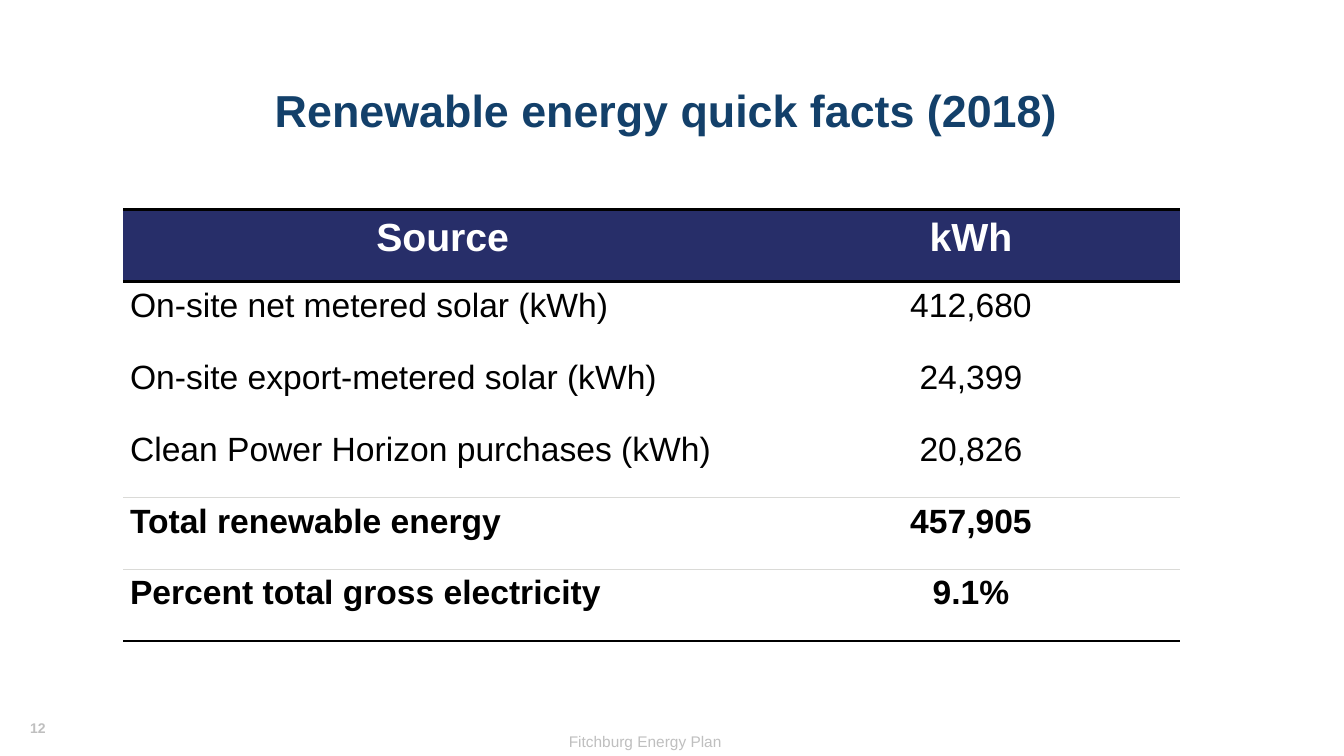
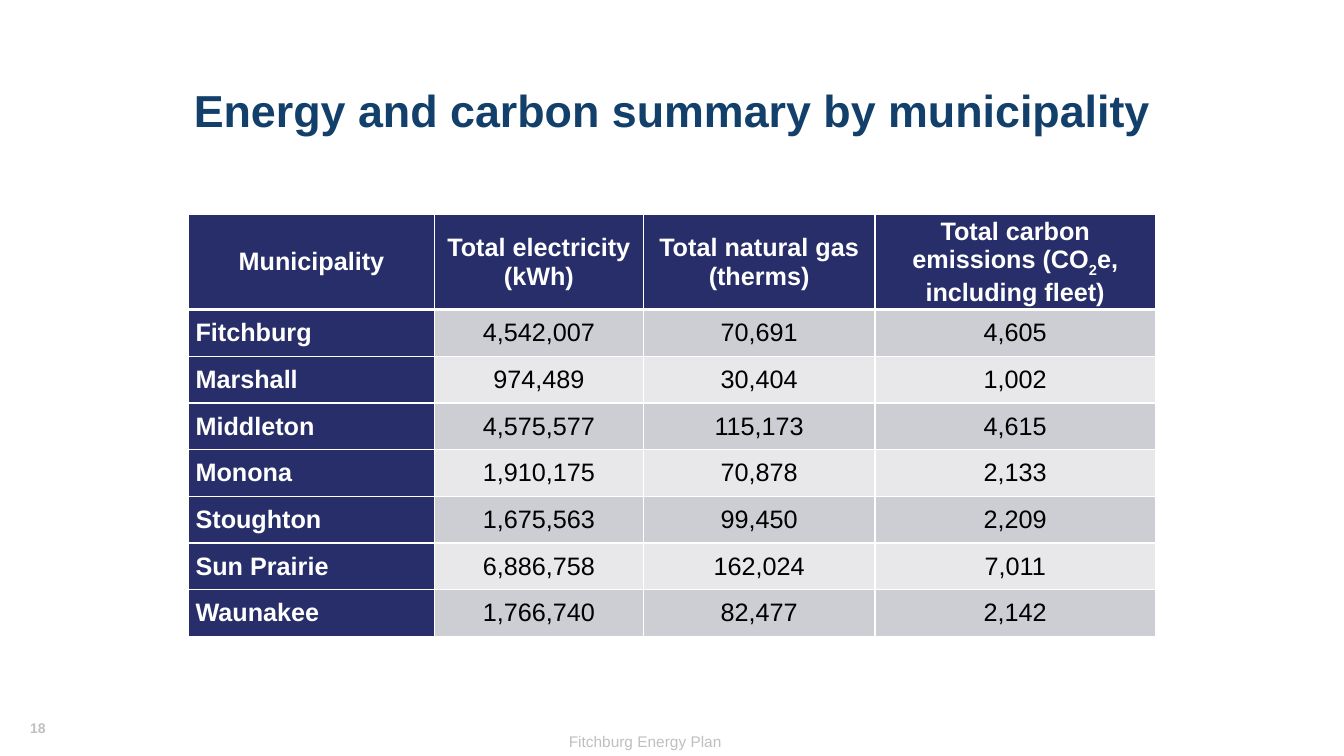
from lxml import etree
from pptx import Presentation
from pptx.dml.color import RGBColor
from pptx.enum.text import MSO_ANCHOR, PP_ALIGN
from pptx.oxml.ns import qn
from pptx.util import Inches, Pt

LEFT, CENTER = PP_ALIGN.LEFT, PP_ALIGN.CENTER
TOP, MIDDLE = MSO_ANCHOR.TOP, MSO_ANCHOR.MIDDLE

NAVY = RGBColor(0x27, 0x2E, 0x69)
TITLE_BLUE = RGBColor(0x13, 0x40, 0x6A)
WHITE = RGBColor(0xFF, 0xFF, 0xFF)
BLACK = RGBColor(0, 0, 0)
FOOTER_GREY = RGBColor(0xBF, 0xBF, 0xBF)
RULE_GREY = RGBColor(0xDA, 0xDA, 0xD7)
BAND_DARK = RGBColor(0xCD, 0xCD, 0xD4)
BAND_LIGHT = RGBColor(0xE8, 0xE8, 0xEB)

FONT = "Arial"
SIDES = ("L", "R", "T", "B")

TITLE_BOX = (0.92, 0.4, 11.5, 1.45)
FOOTER_BOX = (4.35, 7.21, 4.1, 0.29)
NUMBER_BOX = (0.2, 7.09, 0.37, 0.27)

SOURCES = [
    ("Source", "kWh"),
    ("On-site net metered solar (kWh)", "412,680"),
    ("On-site export-metered solar (kWh)", "24,399"),
    ("Clean Power Horizon purchases (kWh)", "20,826"),
    ("Total renewable energy", "457,905"),
    ("Percent total gross electricity", "9.1%"),
]
MUNICIPALITIES = [
    ("Municipality", "Total electricity (kWh)", "Total natural gas (therms)",
     ("Total carbon emissions (CO", "2", "e, including fleet)")),
    ("Fitchburg", "4,542,007", "70,691", "4,605"),
    ("Marshall", "974,489", "30,404", "1,002"),
    ("Middleton", "4,575,577", "115,173", "4,615"),
    ("Monona", "1,910,175", "70,878", "2,133"),
    ("Stoughton", "1,675,563", "99,450", "2,209"),
    ("Sun Prairie", "6,886,758", "162,024", "7,011"),
    ("Waunakee", "1,766,740", "82,477", "2,142"),
]


def write(tf, text, size, color, bold=False, align=LEFT, spacing=None):
    p = tf.paragraphs[0]
    p.alignment = align
    p.line_spacing = spacing
    parts = (text,) if isinstance(text, str) else text
    for i, part in enumerate(parts):
        r = p.add_run()
        r.text = part
        r.font.name, r.font.size, r.font.bold = FONT, Pt(size), bold
        r.font.color.rgb = color
        if i % 2:
            r._r.get_or_add_rPr().set("baseline", "-25000")


def add_text(s, box, text, size, color, anchor=TOP, **style):
    tf = s.shapes.add_textbox(*map(Inches, box)).text_frame
    tf.word_wrap = True
    tf.vertical_anchor = anchor
    write(tf, text, size, color, **style)


def add_slide(prs, title, number):
    s = prs.slides.add_slide(prs.slide_layouts[6])
    add_text(s, FOOTER_BOX, "Fitchburg Energy Plan", 11, FOOTER_GREY, align=CENTER)
    add_text(s, NUMBER_BOX, number, 10, FOOTER_GREY, bold=True)
    add_text(s, TITLE_BOX, title, 32, TITLE_BLUE, MIDDLE,
             bold=True, align=CENTER, spacing=0.9)
    return s


def add_grid(s, box, col_shares, row_shares):
    x, y, w, h = map(Inches, box)
    table = s.shapes.add_table(len(row_shares), len(col_shares), x, y, w, h).table
    for col, share in zip(table.columns, col_shares):
        col.width = int(w * share / sum(col_shares))
    for row, share in zip(table.rows, row_shares):
        row.height = int(h * share / sum(row_shares))
    return table


def style_cell(cell, fill, borders, anchor):
    tcPr = cell._tc.get_or_add_tcPr()
    for side in SIDES:
        ln = etree.SubElement(tcPr, qn(f"a:ln{side}"))
        if side in borders:
            color, width = borders[side]
            ln.set("w", str(Pt(width)))
            paint = etree.SubElement(ln, qn("a:solidFill"))
            etree.SubElement(paint, qn("a:srgbClr"), val=str(color))
        else:
            ln.set("w", "0")
            etree.SubElement(ln, qn("a:noFill"))
    cell.fill.solid()
    cell.fill.fore_color.rgb = fill
    cell.vertical_anchor = anchor
    cell.margin_left = cell.margin_right = Inches(0.07)
    cell.margin_top = cell.margin_bottom = 0


def source_table(s, box):
    last = len(SOURCES)
    rules = {0: (BLACK, 2), 1: (BLACK, 2), last: (BLACK, 2),
             last - 2: (RULE_GREY, 0.75), last - 1: (RULE_GREY, 0.75)}
    table = add_grid(s, box, (6.34, 4.14), [1] * last)
    for i, row in enumerate(SOURCES):
        head = i == 0
        edges = {side: rules[n] for side, n in (("T", i), ("B", i + 1)) if n in rules}
        for j, text in enumerate(row):
            cell = table.cell(i, j)
            style_cell(cell, NAVY if head else WHITE, edges, TOP)
            write(cell.text_frame, text, 28 if head else 24,
                  WHITE if head else BLACK, bold=head or i >= last - 2,
                  align=CENTER if head or j else LEFT, spacing=1.15)


def municipality_table(s, box):
    table = add_grid(s, box, (2.44, 2.07, 2.3, 2.78),
                     [2] + [1] * (len(MUNICIPALITIES) - 1))
    for i, row in enumerate(MUNICIPALITIES):
        edges = dict.fromkeys(SIDES, (WHITE, 1))
        if i < 2:
            edges["T" if i else "B"] = (WHITE, 3)
        for j, text in enumerate(row):
            label = i == 0 or j == 0
            band = BAND_DARK if i % 2 else BAND_LIGHT
            cell = table.cell(i, j)
            style_cell(cell, NAVY if label else band, edges, MIDDLE)
            write(cell.text_frame, text, 18, WHITE if label else BLACK,
                  bold=label, align=LEFT if i and j == 0 else CENTER)


def main():
    prs = Presentation()
    prs.slide_width, prs.slide_height = Inches(13.33), Inches(7.5)
    s = add_slide(prs, "Renewable energy quick facts (2018) ", "12")
    source_table(s, (1.22, 2.08, 10.48, 4.28))
    s = add_slide(prs, "Energy and carbon summary by municipality", "18")
    municipality_table(s, (1.87, 2.13, 9.59, 4.17))
    prs.save("out.pptx")


if __name__ == "__main__":
    main()
